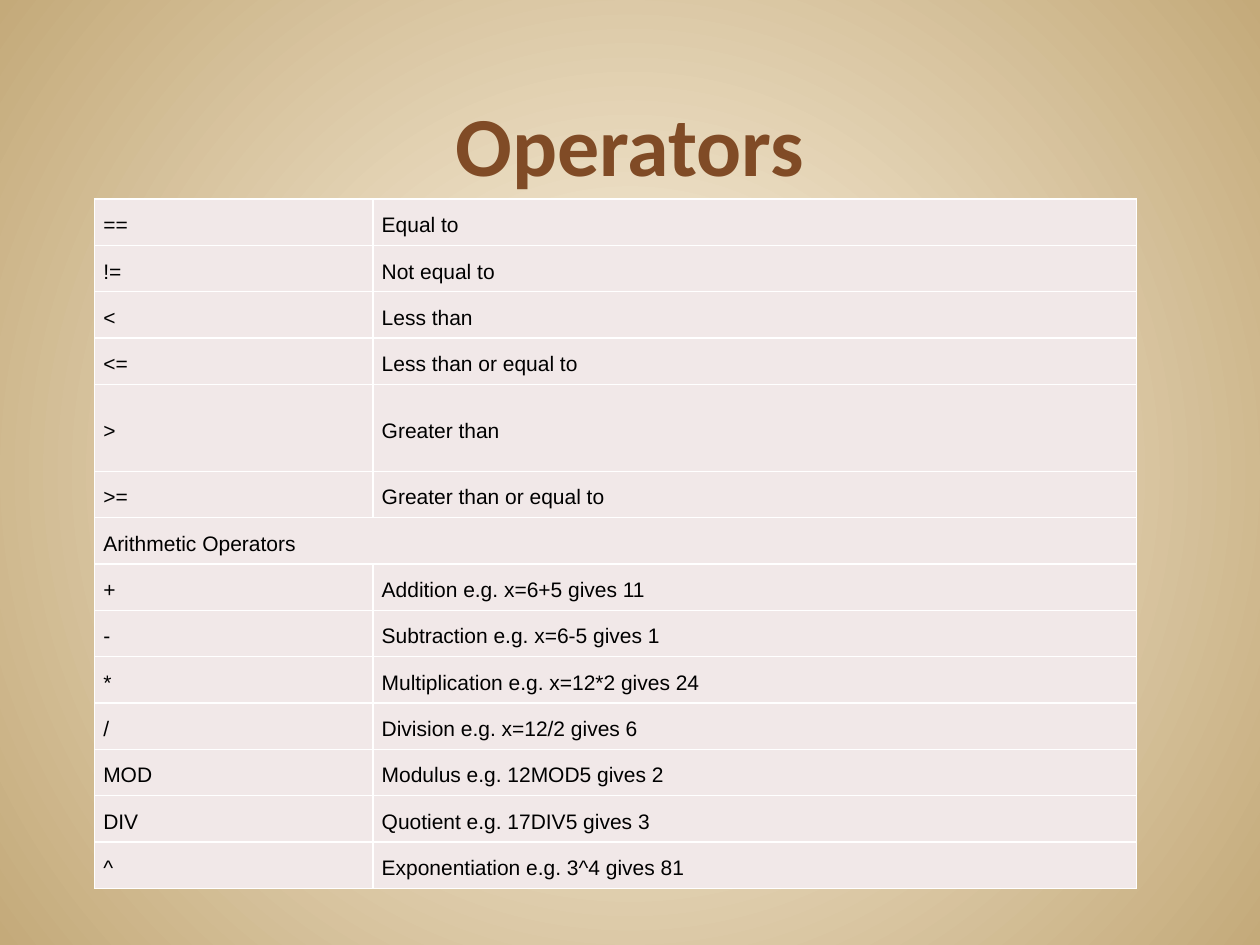
from lxml import etree
from pptx import Presentation
from pptx.dml.color import RGBColor
from pptx.enum.text import MSO_ANCHOR as Anchor, PP_ALIGN as Align
from pptx.oxml import parse_xml
from pptx.oxml.ns import nsdecls, qn
from pptx.util import Inches, Pt

TITLE = "Operators"
ROWS = [
    ("==", "Equal to"),
    ("!=", "Not equal to"),
    ("<", "Less than"),
    ("<=", "Less than or equal to"),
    (">", "Greater than"),
    (">=", "Greater than or equal to"),
    ("Arithmetic Operators",),
    ("+", "Addition e.g. x=6+5 gives 11"),
    ("-", "Subtraction e.g. x=6-5 gives 1"),
    ("*", "Multiplication e.g. x=12*2 gives 24"),
    ("/", "Division e.g. x=12/2 gives 6"),
    ("MOD", "Modulus e.g. 12MOD5 gives 2"),
    ("DIV", "Quotient e.g. 17DIV5 gives 3"),
    ("^", "Exponentiation e.g. 3^4 gives 81"),
]
COLUMN_WIDTHS = (2.21, 6.06)
ROW_HEIGHT, TALL_HEIGHT, TALL_ROW = 0.368, 0.69, 4
BACKGROUND = ("FFF7E8", "C4AA7A")
BROWN, BLACK, WHITE, PINK = "804B26", "000000", "FFFFFF", "F1E8E8"


def color(value):
    """Turn a hex string into a colour."""
    return RGBColor.from_string(value)


def write(frame, text, font="Arial", size=12, ink=BLACK, bold=False,
          align=Align.LEFT, line=None, after=0):
    """Put one formatted paragraph into a text frame."""
    para = frame.paragraphs[0]
    para.alignment = align
    para.space_after = Pt(after)
    if line:
        para.line_spacing = Pt(line)
    span = para.add_run()
    span.text = text
    span.font.name, span.font.size, span.font.bold = font, Pt(size), bold
    span.font.color.rgb = color(ink)


def paint_background(page):
    """Fill the page with a gradient that spreads from its centre."""
    fill = page.background.fill
    fill.gradient()
    for stop, value in zip(fill.gradient_stops, BACKGROUND):
        stop.color.rgb = color(value)
    gradient = next(page.element.iter(qn("a:gradFill")))
    gradient.replace(gradient.find(qn("a:lin")), parse_xml(
        f'<a:path {nsdecls("a")} path="circle">'
        '<a:fillToRect l="50000" t="50000" r="50000" b="50000"/></a:path>'))


def style_cell(cell):
    """Give a cell its margins, white borders and fill."""
    cell.vertical_anchor = Anchor.MIDDLE
    cell.margin_left = cell.margin_right = Inches(0.07)
    cell.margin_top = cell.margin_bottom = 0
    properties = cell._tc.get_or_add_tcPr()
    for side in ("lnL", "lnR", "lnT", "lnB"):
        border = etree.SubElement(properties, qn(f"a:{side}"), w=str(Pt(1)))
        paint = etree.SubElement(border, qn("a:solidFill"))
        etree.SubElement(paint, qn("a:srgbClr"), val=WHITE)
    cell.fill.solid()
    cell.fill.fore_color.rgb = color(PINK)


def add_title(page):
    """Add the heading above the table."""
    box = page.shapes.add_textbox(Inches(0.5), Inches(0.33), Inches(9), Inches(1.25))
    frame = box.text_frame
    frame.word_wrap = True
    frame.vertical_anchor = Anchor.BOTTOM
    write(frame, TITLE, font="Calibri", size=48, ink=BROWN, bold=True, align=Align.CENTER)


def add_operators(page):
    """Add the operator table, merging rows that hold a single heading."""
    heights = [TALL_HEIGHT if i == TALL_ROW else ROW_HEIGHT for i in range(len(ROWS))]
    table = page.shapes.add_table(
        len(ROWS), len(COLUMN_WIDTHS), Inches(0.75), Inches(1.58),
        Inches(sum(COLUMN_WIDTHS)), Inches(sum(heights))).table
    table.first_row = table.horz_banding = False
    for column, width in zip(table.columns, COLUMN_WIDTHS):
        column.width = Inches(width)
    for i, (texts, height) in enumerate(zip(ROWS, heights)):
        table.rows[i].height = Inches(height)
        cells = table.rows[i].cells
        for cell in cells:
            style_cell(cell)
        for cell, text in zip(cells, texts):
            write(cell.text_frame, text, line=17, after=12)
        if len(texts) == 1:
            table.cell(i, 0).merge(table.cell(i, len(COLUMN_WIDTHS) - 1))


def main():
    """Build the deck and save it."""
    deck = Presentation()
    deck.slide_width, deck.slide_height = Inches(10), Inches(7.5)
    page = deck.slides.add_slide(deck.slide_layouts[6])
    paint_background(page)
    add_title(page)
    add_operators(page)
    deck.save("out.pptx")


if __name__ == "__main__":
    main()
